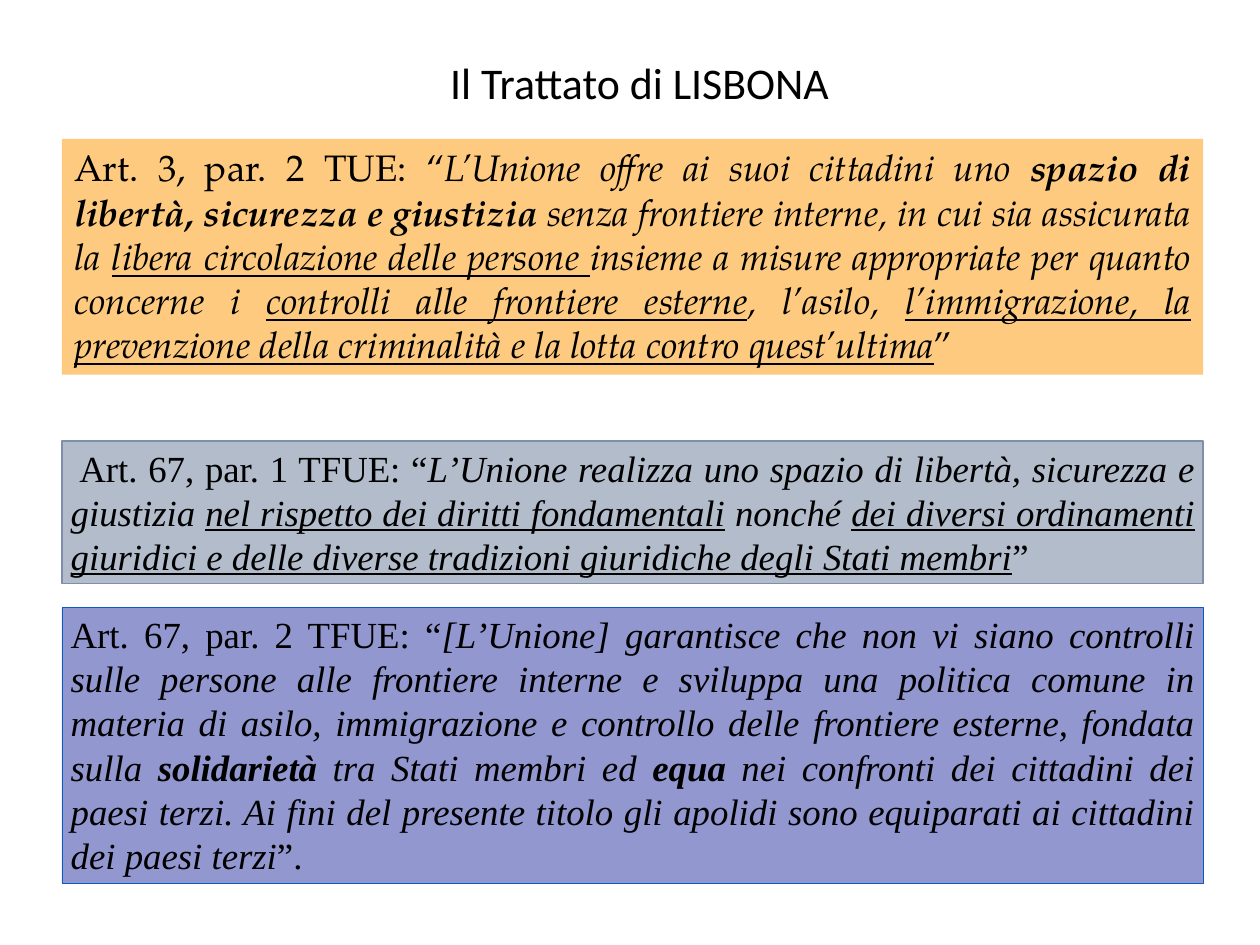
"""Build a slide on the Lisbon Treaty: a title above three quoted articles."""
from pptx import Presentation, util as u
from pptx.dml.color import RGBColor
from pptx.enum import shapes, text

theme = {
    "ink": "000000", "title": ("Calibri", 35.6), "size": 29.9,
    "serif": "Times New Roman", "book": "TeX Gyre Pagella",
    "sand": "FDCA7F", "slate": "B2BCCB", "steel": "7F8FA9",
    "violet": "9297CF", "blue": "0E58C4",
}

deck = Presentation()
deck.slide_width, deck.slide_height = u.Inches(14.22), u.Inches(10.67)
slide = deck.slides.add_slide(deck.slide_layouts[6])
col, row = deck.slide_width / 100, deck.slide_height / 100


def place(left, top, wide, high):
    """Turn shares of the slide, in percent, into lengths."""
    return [round(n) for n in (left * col, top * row, wide * col, high * row)]


def write(shape, runs, font, size, align, pad):
    """Fill a shape with one paragraph; marks are b, i and u."""
    frame = shape.text_frame
    frame.word_wrap = True
    frame.vertical_anchor = text.MSO_ANCHOR.TOP
    frame.margin_left = frame.margin_right = u.Inches(pad)
    frame.margin_top = frame.margin_bottom = u.Inches(pad / 2)
    para = frame.paragraphs[0]
    para.alignment = align
    para.font.name, para.font.size = font, u.Pt(size)
    para.font.color.rgb = RGBColor.from_string(theme["ink"])
    for marks, words in runs:
        run = para.add_run()
        run.text = words
        if "b" in marks:
            run.font.bold = True
        if "i" in marks:
            run.font.italic = True
        if "u" in marks:
            run.font.underline = True


title = slide.shapes.add_textbox(*place(2.67, 5.25, 96.2, 6.94))
write(title, [("", "Il Trattato di LISBONA")], *theme["title"],
      text.PP_ALIGN.CENTER, 0.14)

union = [
    ("", "Art. 3, par. 2 TUE: “"),
    ("i", "L’Unione offre ai suoi cittadini uno "),
    ("bi", "spazio di libertà, sicurezza e giustizia "),
    ("i", "senza frontiere interne, in cui sia assicurata la "),
    ("iu", "libera circolazione delle persone "),
    ("i", "insieme a misure appropriate per quanto concerne i "),
    ("iu", "controlli alle frontiere esterne"),
    ("i", ", l’asilo, "),
    ("iu", "l’immigrazione, la prevenzione della criminalità "
           "e la lotta contro quest’ultima"),
    ("", "”"),
]
rights = [
    ("", " Art. 67, par. 1 TFUE: “"),
    ("i", "L’Unione realizza uno spazio di libertà, sicurezza e giustizia "),
    ("iu", "nel rispetto dei diritti fondamentali"),
    ("i", " nonché "),
    ("iu", "dei diversi ordinamenti giuridici e delle diverse tradizioni "
           "giuridiche degli Stati membri"),
    ("", "”"),
]
borders = [
    ("", "Art. 67, par. 2 TFUE: “"),
    ("i", "[L’Unione] garantisce che non vi siano controlli sulle persone "
          "alle frontiere interne e sviluppa una politica comune in materia "
          "di asilo, immigrazione e controllo delle frontiere esterne, "
          "fondata sulla "),
    ("bi", "solidarietà"),
    ("i", " tra Stati membri ed "),
    ("bi", "equa"),
    ("i", " nei confronti dei cittadini dei paesi terzi. Ai fini del "
          "presente titolo gli apolidi sono equiparati ai cittadini dei "
          "paesi terzi"),
    ("", "”."),
]

boxes = [
    (14.71, 24.93, "sand", None, 0, "book", 0.14, union),
    (46.67, 15.09, "slate", "steel", 1.5, "serif", 0.1, rights),
    (64.29, 29.24, "violet", "blue", 0.75, "serif", 0.1, borders),
]
for top, high, fill, edge, thick, face, pad, runs in boxes:
    box = slide.shapes.add_shape(shapes.MSO_SHAPE.RECTANGLE,
                                 *place(4.92, top, 90.58, high))
    box.shadow.inherit = False
    box.fill.solid()
    box.fill.fore_color.rgb = RGBColor.from_string(theme[fill])
    if edge:
        box.line.color.rgb = RGBColor.from_string(theme[edge])
        box.line.width = u.Pt(thick)
    else:
        box.line.fill.background()
    write(box, runs, theme[face], theme["size"], text.PP_ALIGN.JUSTIFY, pad)

deck.save("out.pptx")
